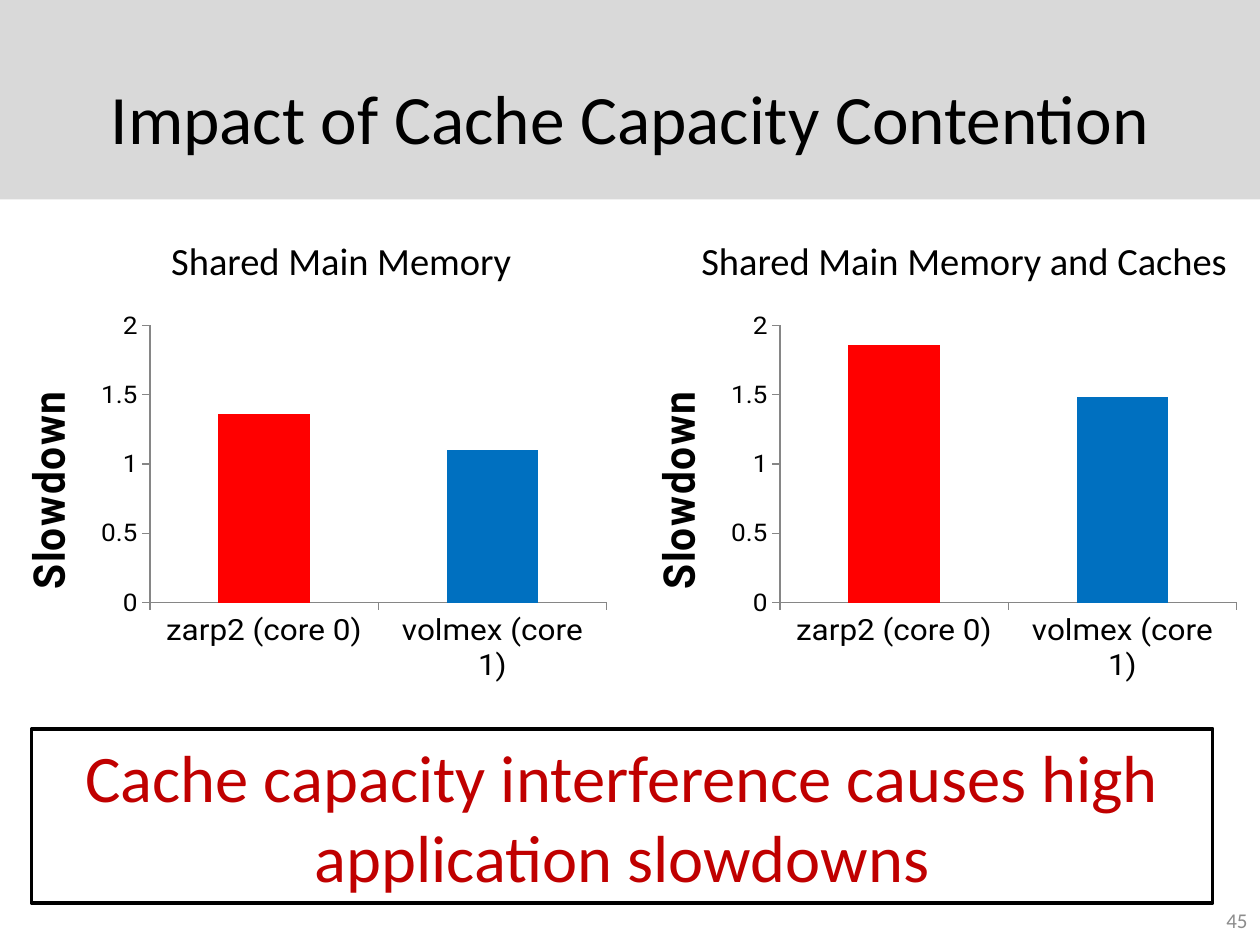
from dataclasses import dataclass

from lxml import etree
from pptx import Presentation
from pptx.chart.data import CategoryChartData
from pptx.dml.color import RGBColor
from pptx.enum.chart import XL_CHART_TYPE, XL_TICK_MARK
from pptx.enum.shapes import MSO_SHAPE
from pptx.enum.text import MSO_ANCHOR, PP_ALIGN
from pptx.oxml.ns import qn
from pptx.util import Pt

COLUMNS = XL_CHART_TYPE.COLUMN_CLUSTERED
TICK_OUTSIDE, TICK_NONE = XL_TICK_MARK.OUTSIDE, XL_TICK_MARK.NONE
RECTANGLE = MSO_SHAPE.RECTANGLE
TOP, MIDDLE = MSO_ANCHOR.TOP, MSO_ANCHOR.MIDDLE
CENTER, RIGHT = PP_ALIGN.CENTER, PP_ALIGN.RIGHT


@dataclass(frozen=True)
class Theme:
    text_font: str = "Calibri"
    chart_font: str = "Roboto"
    black: RGBColor = RGBColor(0, 0, 0)
    band: RGBColor = RGBColor(0xD9, 0xD9, 0xD9)
    muted: RGBColor = RGBColor(0x8C, 0x8C, 0x8C)
    axis: RGBColor = RGBColor(0x86, 0x86, 0x86)
    message: RGBColor = RGBColor(0xC0, 0, 0)
    bars: tuple = (RGBColor(0xFF, 0, 0), RGBColor(0, 0x70, 0xC0))
    title_size: float = 39.6
    message_size: float = 38
    heading_size: float = 22
    number_size: float = 12
    axis_title_size: float = 25
    category_size: float = 18
    value_size: float = 15
    chart_size: float = 10


THEME = Theme()


def style_font(font, size, color=THEME.black, name=THEME.text_font, bold=False):
    font.name, font.size, font.bold = name, Pt(size), bold
    font.color.rgb = color


def write_text(shape, text, size, color=THEME.black, align=CENTER, anchor=MIDDLE):
    frame = shape.text_frame
    frame.word_wrap = True
    frame.vertical_anchor = anchor
    paragraph = frame.paragraphs[0]
    paragraph.alignment = align
    run = paragraph.add_run()
    run.text = text
    style_font(run.font, size, color)


presentation = Presentation()
presentation.slide_width, presentation.slide_height = Pt(720), Pt(540)
slide = presentation.slides.add_slide(presentation.slide_layouts[6])
shapes = slide.shapes

# Title band
band = shapes.add_shape(RECTANGLE, Pt(0), Pt(0), Pt(720), Pt(114))
band.shadow.inherit = False
band.fill.solid()
band.fill.fore_color.rgb = THEME.band
band.line.fill.background()
title = shapes.add_textbox(Pt(36), Pt(22), Pt(648), Pt(90))
write_text(title, "Impact of Cache Capacity Contention", THEME.title_size)

# Slide number
number = shapes.add_textbox(Pt(552), Pt(511), Pt(168), Pt(29))
write_text(number, "45", THEME.number_size, THEME.muted, RIGHT)

# Message box
message = shapes.add_shape(RECTANGLE, Pt(18), Pt(416.5), Pt(675), Pt(99.5))
message.shadow.inherit = False
message.fill.background()
message.line.color.rgb = THEME.black
message.line.width = Pt(2)
write_text(message, "Cache capacity interference causes high application slowdowns",
           THEME.message_size, THEME.message)

# Two charts, each under its heading
panels = [
    ("Shared Main Memory", 78, 234, -6.5, (1.36, 1.1)),
    ("Shared Main Memory and Caches", 386, 330, 353.5, (1.86, 1.48)),
]
plot_area = {"x": 0.256, "y": 0.06, "w": 0.725, "h": 0.79}

for heading_text, heading_left, heading_width, chart_left, slowdowns in panels:
    heading = shapes.add_textbox(Pt(heading_left), Pt(132), Pt(heading_width), Pt(34))
    write_text(heading, heading_text, THEME.heading_size, anchor=TOP)

    data = CategoryChartData()
    data.categories = ["zarp2 (core 0)", "volmex (core 1)"]
    data.add_series("Slowdown", slowdowns)
    chart = shapes.add_chart(COLUMNS, Pt(chart_left), Pt(174), Pt(360), Pt(216), data).chart
    chart.has_legend = False
    chart.has_title = False
    style_font(chart.font, THEME.chart_size)

    # Bars
    plot = chart.plots[0]
    plot.gap_width = 150
    plot.vary_by_categories = False
    series = plot.series[0]
    for index, color in enumerate(THEME.bars):
        fill = series.points[index].format.fill
        fill.solid()
        fill.fore_color.rgb = color

    # Axes
    value_axis, category_axis = chart.value_axis, chart.category_axis
    for axis, size in ((value_axis, THEME.value_size), (category_axis, THEME.category_size)):
        axis.has_major_gridlines = False
        axis.major_tick_mark = TICK_OUTSIDE
        axis.minor_tick_mark = TICK_NONE
        axis.format.line.color.rgb = THEME.axis
        axis.format.line.width = Pt(0.75)
        style_font(axis.tick_labels.font, size, name=THEME.chart_font)
    value_axis.minimum_scale, value_axis.maximum_scale = 0, 2
    value_axis.major_unit = 0.5
    value_axis.tick_labels.number_format = "General"
    value_axis.tick_labels.number_format_is_linked = False
    run = value_axis.axis_title.text_frame.paragraphs[0].add_run()
    run.text = "Slowdown"
    style_font(run.font, THEME.axis_title_size, name=THEME.chart_font, bold=True)

    # Fixed inner plot area, as fractions of the chart
    plot_element = chart.element.find(".//" + qn("c:plotArea"))
    for old_layout in plot_element.findall(qn("c:layout")):
        plot_element.remove(old_layout)
    layout = etree.Element(qn("c:layout"))
    plot_element.insert(0, layout)
    manual = etree.SubElement(layout, qn("c:manualLayout"))
    settings = {"layoutTarget": "inner", "xMode": "edge", "yMode": "edge", **plot_area}
    for tag, value in settings.items():
        etree.SubElement(manual, qn("c:" + tag)).set("val", str(value))

presentation.save("out.pptx")
